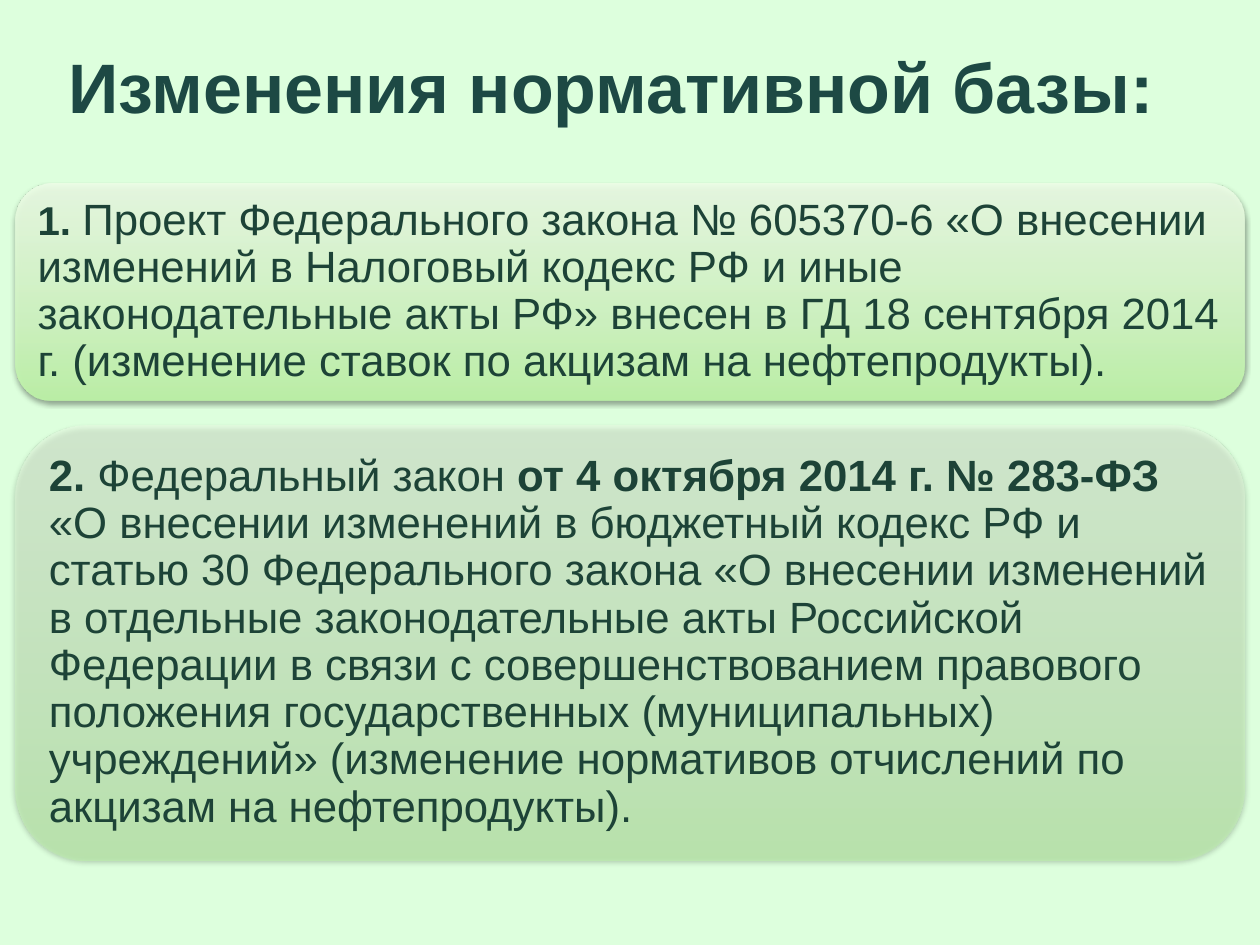
from dataclasses import dataclass

from pptx import Presentation
from pptx.dml.color import RGBColor
from pptx.enum.shapes import MSO_SHAPE
from pptx.enum.text import MSO_ANCHOR, PP_ALIGN
from pptx.oxml import parse_xml
from pptx.oxml.ns import nsdecls
from pptx.slide import Slide
from pptx.util import Inches, Pt

MINT = RGBColor(0xDD, 0xFF, 0xDD)
TEAL = RGBColor(0x1D, 0x49, 0x44)
DARK_GREEN = RGBColor(0x1D, 0x43, 0x37)
BLACK = RGBColor(0, 0, 0)
CARD_STOPS = (
    (0, RGBColor(0xBE, 0xF5, 0xA7)),
    (35, RGBColor(0xD1, 0xF7, 0xC2)),
    (100, RGBColor(0xED, 0xFD, 0xE7)),
)


@dataclass
class LawSlide:
    """Draws the title, cards and law texts of one slide in a shared style."""

    slide: Slide
    font: str = "Arial"
    inset: float = 0.1

    def background(self, color):
        fill = self.slide.background.fill
        fill.solid()
        fill.fore_color.rgb = color

    def add_run(self, paragraph, text, size, color, bold):
        run = paragraph.add_run()
        run.text = text
        run.font.name = self.font
        run.font.size = Pt(size)
        run.font.bold = bold
        run.font.color.rgb = color

    def title(self, text, left, top, width, height):
        heading = self.slide.shapes.title
        heading.left, heading.top = Inches(left), Inches(top)
        heading.width, heading.height = Inches(width), Inches(height)
        frame = heading.text_frame
        frame.vertical_anchor = MSO_ANCHOR.MIDDLE
        paragraph = frame.paragraphs[0]
        paragraph.alignment = PP_ALIGN.CENTER
        self.add_run(paragraph, text, 40, TEAL, True)

    def card(self, left, top, width, height, opacity):
        card = self.slide.shapes.add_shape(
            MSO_SHAPE.ROUNDED_RECTANGLE,
            Inches(left), Inches(top), Inches(width), Inches(height),
        )
        stops = "".join(
            f'<a:gs pos="{position * 1000}"><a:srgbClr val="{color}">'
            f'<a:alpha val="{opacity * 1000}"/></a:srgbClr></a:gs>'
            for position, color in CARD_STOPS
        )
        properties = card._element.spPr
        properties.append(parse_xml(
            f'<a:gradFill {nsdecls("a")} rotWithShape="1"><a:gsLst>{stops}</a:gsLst>'
            '<a:lin ang="16200000" scaled="0"/></a:gradFill>'
        ))
        card.line.fill.background()
        properties.append(parse_xml(
            f'<a:effectLst {nsdecls("a")}><a:outerShdw blurRad="{Pt(3.1)}" '
            f'dist="{Pt(1.6)}" dir="5400000" rotWithShape="0">'
            f'<a:srgbClr val="{BLACK}"><a:alpha val="38000"/></a:srgbClr>'
            '</a:outerShdw></a:effectLst>'
        ))

    def law_text(self, left, top, width, height, lines):
        law = self.slide.shapes.add_textbox(
            Inches(left), Inches(top), Inches(width), Inches(height)
        )
        frame = law.text_frame
        frame.word_wrap = True
        frame.vertical_anchor = MSO_ANCHOR.MIDDLE
        frame.margin_left = frame.margin_right = Inches(self.inset)
        frame.margin_top = frame.margin_bottom = Inches(self.inset)
        paragraph = frame.paragraphs[0]
        paragraph.line_spacing = 0.9
        for index, line in enumerate(lines):
            if index:
                paragraph.add_line_break()
            for text, size, bold in line:
                self.add_run(paragraph, text, size, DARK_GREEN, bold)


def main():
    presentation = Presentation()
    presentation.slide_width, presentation.slide_height = Inches(10), Inches(7.5)
    page = LawSlide(presentation.slides.add_slide(presentation.slide_layouts[5]))
    page.background(MINT)
    page.title("Изменения нормативной базы:", 0.35, 0.21, 9, 0.93)

    page.card(0.12, 1.46, 9.76, 1.72, opacity=90)
    page.law_text(0.2, 1.54, 9.6, 1.55, [[
        ("1. ", 23, True),
        ("Проект Федерального закона № 605370-6 «О внесении изменений в "
         "Налоговый кодекс РФ и иные законодательные акты РФ» внесен в ГД "
         "18 сентября 2014 г. (изменение ставок по акцизам на "
         "нефтепродукты).", 25, False),
    ]])

    page.card(0.12, 3.38, 9.76, 3.45, opacity=50)
    page.law_text(0.29, 3.54, 9.43, 3.12, [
        [
            ("2.", 25, True),
            (" Федеральный закон ", 25, False),
            ("от 4 октября 2014 г. № 283-ФЗ ", 25, True),
        ],
        [
            ("«О внесении изменений в бюджетный кодекс РФ и статью 30 "
             "Федерального закона «О внесении изменений в отдельные "
             "законодательные акты Российской Федерации в связи с "
             "совершенствованием правового положения государственных "
             "(муниципальных) учреждений» (изменение нормативов отчислений "
             "по акцизам на нефтепродукты).", 25, False),
        ],
    ])
    presentation.save("out.pptx")


if __name__ == "__main__":
    main()
